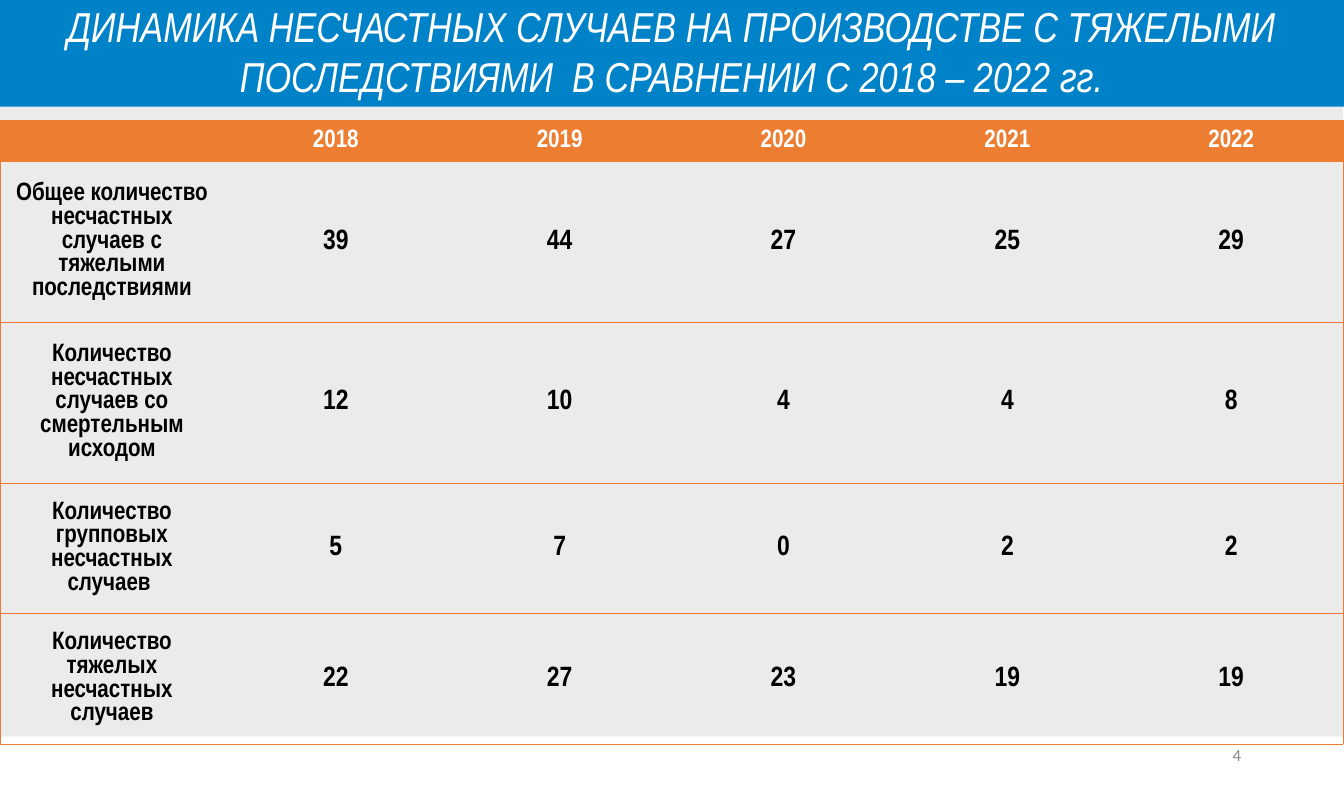
from dataclasses import dataclass

from lxml import etree
from pptx import Presentation
from pptx.dml.color import RGBColor
from pptx.enum import shapes, text
from pptx.oxml import ns
from pptx.util import Cm, Pt


@dataclass(frozen=True)
class Theme:
    blue: str = "0082C8"
    orange: str = "ED7D31"
    panel: str = "EBEBEB"
    white: str = "FFFFFF"
    black: str = "000000"
    grey: str = "8C8C8C"
    face: str = "Arial Narrow"
    plain: str = "Calibri"
    title: float = 30
    label: float = 18
    value: float = 20
    page: float = 12.1
    rule: float = 0.5
    grid: str = "{72833802-FEF1-4C79-8D5D-14CF1EAF98D9}"  # Light Style 2


@dataclass(frozen=True)
class Row:
    label: str
    values: tuple[int, ...]
    height: float


THEME = Theme()
WIDTH, HEIGHT = 34, 20
SPAN = 33.98
HEAD = Row("", (2018, 2019, 2020, 2021, 2022), 1.04)
ROWS = (
    Row("Общее количество несчастных случаев с тяжелыми последствиями",
        (39, 44, 27, 25, 29), 4.01),
    Row("Количество несчастных случаев со смертельным исходом",
        (12, 10, 4, 4, 8), 4.01),
    Row("Количество групповых несчастных случаев ", (5, 7, 0, 2, 2), 3.25),
    Row("Количество тяжелых несчастных случаев", (22, 27, 23, 19, 19), 3.25),
)


def paint(fill, color: str) -> None:
    fill.solid()
    fill.fore_color.rgb = RGBColor.from_string(color)


def place(shape, left: float, top: float, width: float, height: float) -> None:
    shape.left, shape.top = Cm(left), Cm(top)
    shape.width, shape.height = Cm(width), Cm(height)


def write(frame, words: str, size: float, color: str, face: str = THEME.face,
          align=text.PP_ALIGN.CENTER, bold: bool = False,
          italic: bool = False) -> None:
    frame.text = words
    frame.word_wrap = True
    frame.vertical_anchor = text.MSO_ANCHOR.MIDDLE
    para = frame.paragraphs[0]
    para.alignment = align
    for run in para.runs:
        font = run.font
        font.name, font.size = face, Pt(size)
        font.bold, font.italic = bold, italic
        font.color.rgb = RGBColor.from_string(color)


def edge(cell, sides: list[str]) -> None:
    """Draw thin orange borders on the sides, listed in schema order."""
    props = cell._tc.get_or_add_tcPr()
    for spot, side in enumerate(sides):
        line = etree.Element(ns.qn(f"a:{side}"), w=str(Pt(THEME.rule)))
        fill = etree.SubElement(line, ns.qn("a:solidFill"))
        etree.SubElement(fill, ns.qn("a:srgbClr"), val=THEME.orange)
        props.insert(spot, line)


def rims(r: int, c: int, last: int, end: int) -> list[str]:
    """Outer borders, plus a rule above and below each odd row."""
    marks = {
        "lnL": c == 0,
        "lnR": c == end,
        "lnT": r == 0 or r % 2 == 1,
        "lnB": r == last or r % 2 == 1,
    }
    return [side for side, drawn in marks.items() if drawn]


def add_panel(slide) -> None:
    panel = slide.shapes.add_shape(
        shapes.MSO_SHAPE.RECTANGLE, 0, Cm(2.16), Cm(SPAN), Cm(16.46))
    panel.shadow.inherit = False
    paint(panel.fill, THEME.panel)
    panel.line.fill.background()
    slide.shapes._spTree.insert(2, panel._element)  # behind the title


def add_title(slide) -> None:
    title = slide.shapes.title
    place(title, 0, -0.12, WIDTH, 2.82)
    paint(title.fill, THEME.blue)
    write(title.text_frame,
          "ДИНАМИКА НЕСЧАСТНЫХ СЛУЧАЕВ НА ПРОИЗВОДСТВЕ С ТЯЖЕЛЫМИ "
          "ПОСЛЕДСТВИЯМИ  В СРАВНЕНИИ С 2018 – 2022 гг.",
          THEME.title, THEME.white, italic=True)
    title.text_frame.auto_size = text.MSO_AUTO_SIZE.NONE


def add_grid(slide) -> None:
    rows = (HEAD, *ROWS)
    count = len(HEAD.values) + 1
    frame = slide.shapes.add_table(
        len(rows), count, 0, Cm(3.04), Cm(SPAN), Cm(15.82))
    table = frame.table
    table.horz_banding = False
    table._tbl.tblPr.find(ns.qn("a:tableStyleId")).text = THEME.grid
    for col in table.columns:
        col.width = Cm(SPAN / count)
    for r, row in enumerate(rows):
        table.rows[r].height = Cm(row.height)
        head = row is HEAD
        for c, item in enumerate((row.label, *row.values)):
            cell = table.cell(r, c)
            size = THEME.label if head or c == 0 else THEME.value
            color = THEME.white if head else THEME.black
            write(cell.text_frame, str(item), size, color, bold=True)
            cell.vertical_anchor = text.MSO_ANCHOR.MIDDLE
            if head:
                paint(cell.fill, THEME.orange)
            else:
                cell.fill.background()
            edge(cell, rims(r, c, len(rows) - 1, count - 1))
    frame.height = Cm(15.82)


def add_page(slide) -> None:
    box = slide.shapes.add_textbox(Cm(24), Cm(18.54), Cm(7.65), Cm(1.07))
    write(box.text_frame, "4", THEME.page, THEME.grey, THEME.plain,
          text.PP_ALIGN.RIGHT)


def main() -> None:
    deck = Presentation()
    deck.slide_width, deck.slide_height = Cm(WIDTH), Cm(HEIGHT)
    slide = deck.slides.add_slide(deck.slide_layouts[5])
    add_panel(slide)
    add_title(slide)
    add_page(slide)
    add_grid(slide)
    deck.save("out.pptx")


if __name__ == "__main__":
    main()
